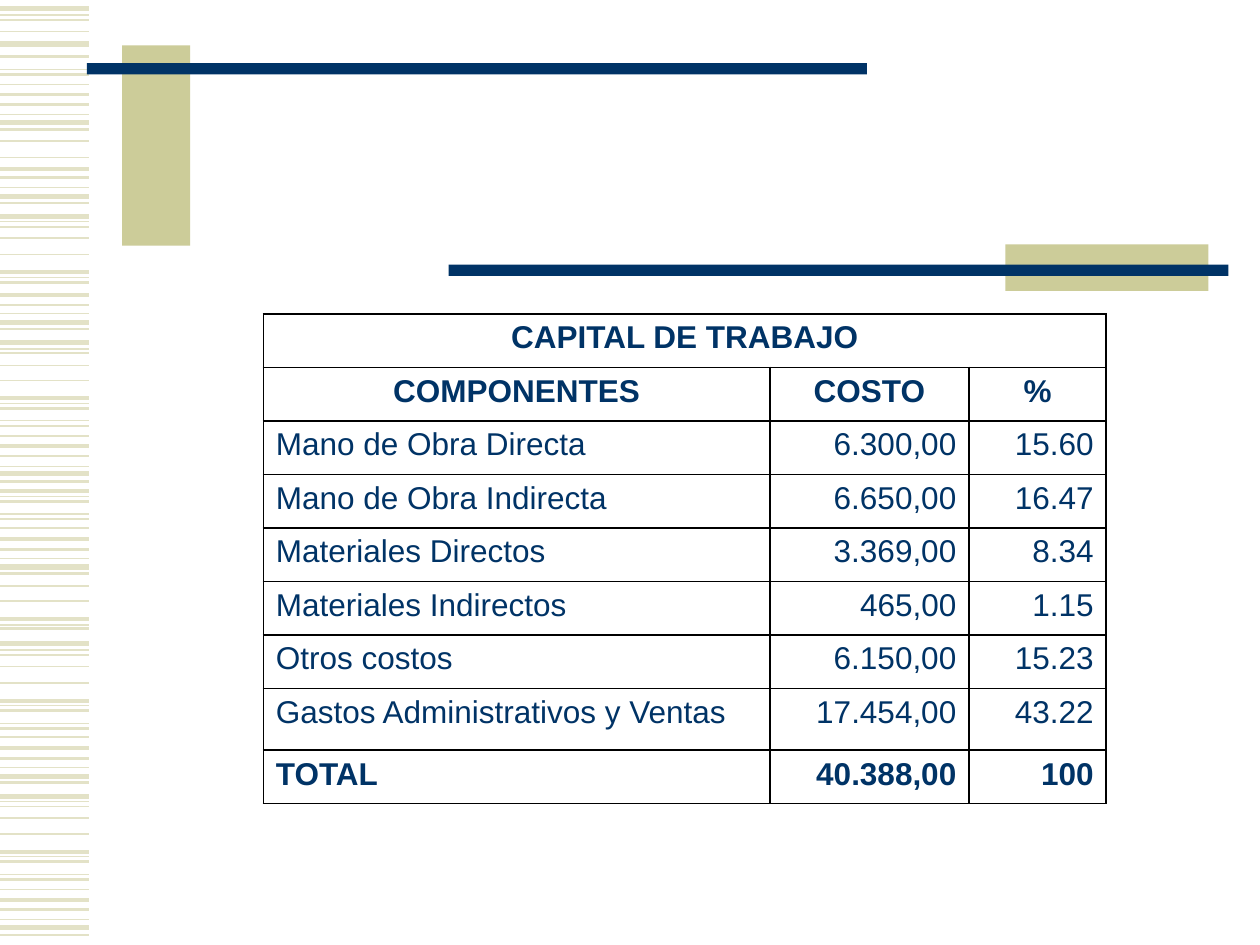
from lxml import etree
from pptx import Presentation
from pptx.dml.color import RGBColor
from pptx.enum.shapes import MSO_CONNECTOR, MSO_SHAPE
from pptx.enum.text import PP_ALIGN
from pptx.oxml.ns import qn
from pptx.util import Inches, Pt

LINE, RECT = MSO_CONNECTOR.STRAIGHT, MSO_SHAPE.RECTANGLE
LEFT, MID, RIGHT = PP_ALIGN.LEFT, PP_ALIGN.CENTER, PP_ALIGN.RIGHT

COLORS = {"navy": "003366", "khaki": "CCCC99", "stripe": "E3E2C7", "rule": "000000"}

# Heights of the side stripes, by line width in points
STRIPES = {
    3: [0.07, 0.35, 0.97, 1.56, 1.72, 2.56, 2.72, 3.76, 4.5, 5.11, 6.16, 6.32, 7.36],
    2.25: [0.75, 1.34, 2.16, 2.34, 3.16, 3.54, 3.9, 4.28, 4.91, 5.56, 5.94, 6.76, 7.14],
    1.5: [0.45, 0.59, 0.83, 1.03, 1.41, 1.61, 2.24, 2.42, 2.61, 3.24, 3.38, 3.62, 3.82,
          3.98, 4.12, 4.36, 4.55, 4.99, 5.64, 5.78, 6.02, 6.21, 6.84, 6.98, 7.22, 7.42],
    1: [0.16, 0.25, 0.67, 1.12, 1.25, 1.8, 1.89, 2.02, 2.8, 2.9, 3.02, 3.46, 4.19,
        4.65, 4.77, 5.2, 5.29, 5.42, 5.85, 6.4, 6.49, 6.62, 7.06],
    0.75: [0.12, 0.55, 0.91, 1.49, 1.76, 2.2, 2.49, 2.77, 3.2, 3.34, 3.7, 3.94, 4.08,
           4.43, 4.96, 5.16, 5.6, 5.74, 6.09, 6.36, 6.8, 6.94, 7.3],
}

BARS = [
    ("khaki", 0.97, 0.36, 0.54, 1.59),
    ("navy", 0.69, 0.5, 6.19, 0.09),
    ("khaki", 7.98, 1.94, 1.61, 0.37),
    ("navy", 3.56, 2.1, 6.19, 0.09),
]

ROWS = [
    ("CAPITAL DE TRABAJO", "", ""),
    ("COMPONENTES", "COSTO", "%"),
    ("Mano de Obra Directa", "6.300,00", "15.60"),
    ("Mano de Obra Indirecta", "6.650,00", "16.47"),
    ("Materiales Directos", "3.369,00", "8.34"),
    ("Materiales Indirectos", "465,00", "1.15"),
    ("Otros costos", "6.150,00", "15.23"),
    ("Gastos Administrativos y Ventas", "17.454,00", "43.22"),
    ("TOTAL", "40.388,00", "100"),
]
WIDTHS = [4.02, 1.58, 1.09]
HIGH, TALL = 3.89, 0.49  # whole table, and its taller last cost row
HEADS, LAST = 2, len(ROWS) - 1


def rgb(name):
    return RGBColor.from_string(COLORS[name])


def add_stripe(slide, y, weight):
    line = slide.shapes.add_connector(LINE, 0, Inches(y), Inches(0.71), Inches(y))
    line.line.color.rgb = rgb("stripe")
    line.line.width = Pt(weight)
    etree.SubElement(line._element.spPr, qn("a:effectLst"))


def add_bar(slide, color, *box):
    bar = slide.shapes.add_shape(RECT, *map(Inches, box))
    bar.shadow.inherit = False
    bar.fill.solid()
    bar.fill.fore_color.rgb = rgb(color)
    bar.line.fill.background()


def set_rules(cell):
    props = cell._tc.get_or_add_tcPr()
    for side in ("lnL", "lnR", "lnT", "lnB"):
        rule = etree.SubElement(props, qn(f"a:{side}"), w=str(Pt(1)))
        fill = etree.SubElement(rule, qn("a:solidFill"))
        etree.SubElement(fill, qn("a:srgbClr"), val=COLORS["rule"])


def fill_cell(cell, text, align, bold):
    set_rules(cell)
    cell.fill.background()
    para = cell.text_frame.paragraphs[0]
    para.text = text
    para.alignment = align
    font = para.font
    font.name, font.size, font.bold = "Arial", Pt(18), bold
    font.color.rgb = rgb("navy")


def add_costs(slide):
    frame = slide.shapes.add_table(len(ROWS), len(WIDTHS), Inches(2.09), Inches(2.49),
                                   Inches(sum(WIDTHS)), Inches(HIGH))
    table = frame.table
    table.first_row = table.horz_banding = False
    for col, width in zip(table.columns, WIDTHS):
        col.width = Inches(width)
    for r, texts in enumerate(ROWS):
        table.rows[r].height = Inches(TALL if r == LAST - 1 else (HIGH - TALL) / LAST)
        for c, text in enumerate(texts):
            align = MID if r < HEADS else RIGHT if c else LEFT
            fill_cell(table.cell(r, c), text, align, r < HEADS or r == LAST)
    table.cell(0, 0).merge(table.cell(0, len(WIDTHS) - 1))


def main():
    deck = Presentation()
    deck.slide_width, deck.slide_height = Inches(10), Inches(7.5)
    slide = deck.slides.add_slide(deck.slide_layouts[6])

    # Side stripes
    for weight, heights in STRIPES.items():
        for y in heights:
            add_stripe(slide, y, weight)

    # Title frame
    for bar in BARS:
        add_bar(slide, *bar)

    # Working capital table
    add_costs(slide)
    deck.save("out.pptx")


if __name__ == "__main__":
    main()
